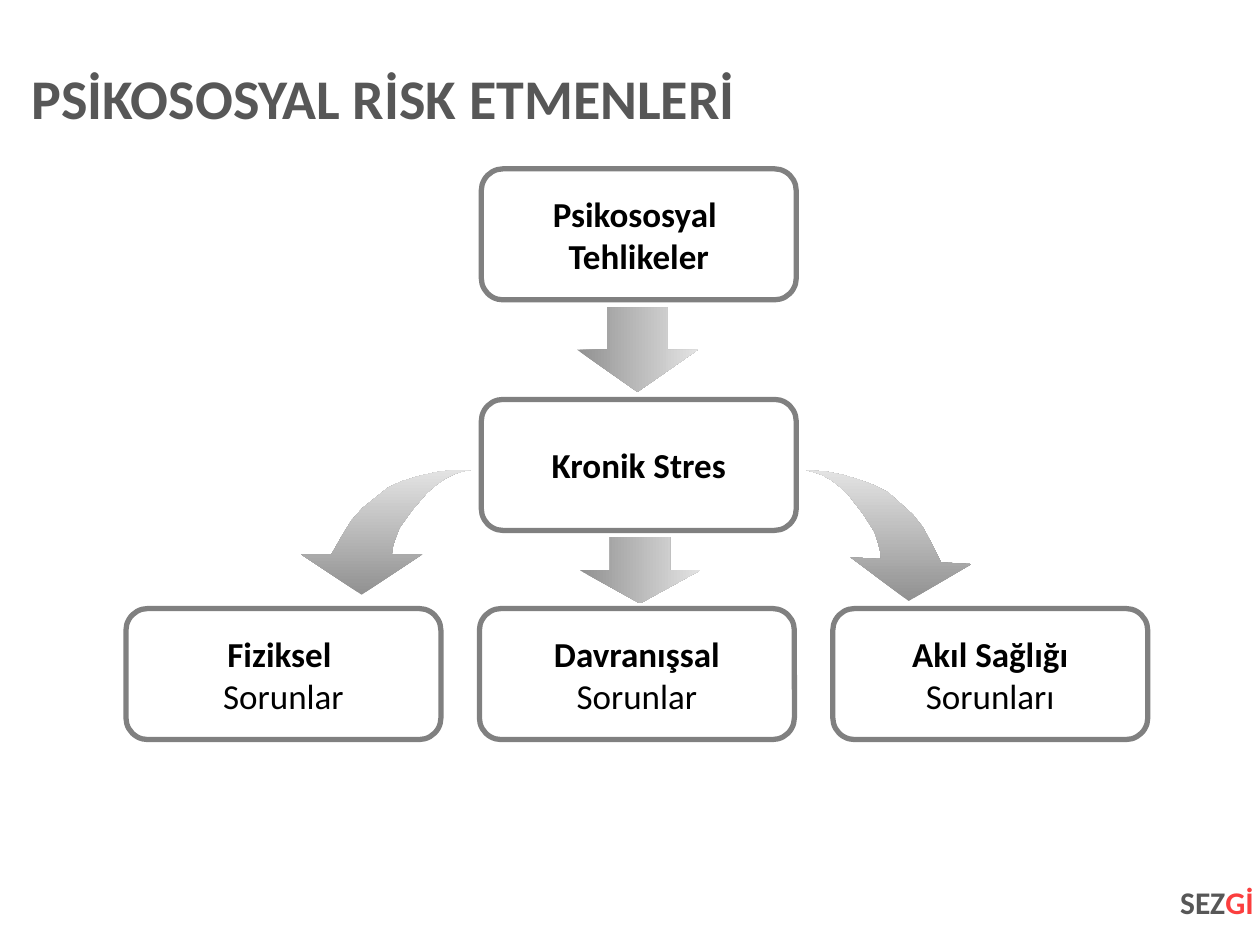
import math

import pptx
import pptx.util
from pptx.dml.color import RGBColor
from pptx.enum.shapes import MSO_SHAPE
from pptx.enum.text import MSO_ANCHOR, PP_ALIGN

BLACK = RGBColor(0x00, 0x00, 0x00)
TITLE_GRAY = RGBColor(0x57, 0x57, 0x57)
BORDER_GRAY = RGBColor(0x80, 0x80, 0x80)
ARROW_DARK = RGBColor(0x91, 0x91, 0x91)
ARROW_LIGHT = RGBColor(0xE3, 0xE3, 0xE3)
RED = RGBColor(0xFB, 0x3E, 0x3E)

# The slide is a grid of 100 columns by 75 rows
COLUMNS, ROWS = 100, 75
BOX_SIZE = (25, 10.4)

# Curved arrow bending down to the left, as (column, row) offsets from its centre
CURVE = [
    (6.75, -4.9), (5.25, -4.9), (3.85, -4.7), (2.55, -4.4), (1.25, -4), (0.15, -3.5),
    (-0.85, -2.7), (-1.85, -1.9), (-2.75, -0.9), (-3.55, 0.4), (-4.35, 1.8),
    (-6.75, 1.8), (-1.95, 5), (2.85, 1.8), (0.45, 1.8), (0.55, 1.1), (0.75, 0.5),
    (1.05, -0.3), (1.55, -1), (2.05, -1.7), (2.65, -2.4), (3.25, -3.1), (3.95, -3.7),
    (4.65, -4.2), (5.45, -4.6), (6.15, -4.8),
]


class SlideBuilder:
    font_name = "Calibri"

    def __init__(self, deck):
        self.slide = deck.slides.add_slide(deck.slide_layouts[6])
        self.column = deck.slide_width / COLUMNS
        self.row = deck.slide_height / ROWS

    def place(self, left, top, width, height):
        return (round(left * self.column), round(top * self.row),
                round(width * self.column), round(height * self.row))

    def style_span(self, span, size, color, bold=True):
        span.font.name = self.font_name
        span.font.size = pptx.util.Pt(size)
        span.font.bold = bold
        span.font.color.rgb = color

    def text(self, area, spans, size, align, anchor, pad=0):
        """Add a one-line text box; spans are (text, color) pairs."""
        frame = self.slide.shapes.add_textbox(*self.place(*area)).text_frame
        frame.word_wrap = True
        frame.vertical_anchor = anchor
        frame.margin_left = frame.margin_right = 0
        frame.margin_top = frame.margin_bottom = pptx.util.Inches(pad)
        para = frame.paragraphs[0]
        para.alignment = align
        for words, color in spans:
            span = para.add_run()
            span.text = words
            self.style_span(span, size, color)
        return para

    def box(self, left, top, lines):
        """Add a rounded box; lines are (text, bold) pairs."""
        box = self.slide.shapes.add_shape(
            MSO_SHAPE.ROUNDED_RECTANGLE, *self.place(left, top, *BOX_SIZE))
        box.shadow.inherit = False
        box.fill.background()
        box.line.color.rgb = BORDER_GRAY
        box.line.width = pptx.util.Pt(3)
        frame = box.text_frame
        frame.word_wrap = False
        frame.vertical_anchor = MSO_ANCHOR.MIDDLE
        frame.text = "\n".join(words for words, bold in lines)
        for para, (words, bold) in zip(frame.paragraphs, lines):
            para.alignment = PP_ALIGN.CENTER
            self.style_span(para.runs[0], 20, BLACK, bold)

    def shade(self, arrow, angle):
        arrow.shadow.inherit = False
        arrow.line.fill.background()
        arrow.fill.gradient()
        arrow.fill.gradient_angle = angle
        for stop, color in zip(arrow.fill.gradient_stops, (ARROW_DARK, ARROW_LIGHT)):
            stop.color.rgb = color

    def down_arrow(self, left, top, height):
        arrow = self.slide.shapes.add_shape(
            MSO_SHAPE.DOWN_ARROW, *self.place(left, top, 9.6, height))
        self.shade(arrow, 0)

    def curved_arrow(self, center_x, center_y, side=1, turn=0):
        """Add a curved arrow; side -1 mirrors it, turn is clockwise degrees."""
        cos, sin = math.cos(math.radians(turn)), math.sin(math.radians(turn))
        points = [((center_x + side * x * cos - y * sin) * self.column,
                   (center_y + side * x * sin + y * cos) * self.row)
                  for x, y in CURVE]
        builder = self.slide.shapes.build_freeform(*points[0])
        builder.add_line_segments(points[1:], close=True)
        self.shade(builder.convert_to_shape(), 90)


def main():
    deck = pptx.Presentation()
    deck.slide_width = pptx.util.Inches(10)
    deck.slide_height = pptx.util.Inches(7.5)
    page = SlideBuilder(deck)

    # Title
    title = page.text((2.5, 4.5, 96.4, 7.1), [("PSİKOSOSYAL RİSK ETMENLERİ", TITLE_GRAY)],
                      32, PP_ALIGN.LEFT, MSO_ANCHOR.MIDDLE, pad=0.05)
    title.line_spacing = 0.9

    # Cause and stress
    page.box(38.2, 13.4, [("Psikososyal ", True), ("Tehlikeler", True)])
    page.box(38.2, 31.7, [("Kronik Stres", True)])

    # Three kinds of problem, evenly spaced
    problems = [("Fiziksel ", "Sorunlar"), ("Davranışsal", "Sorunlar"),
                ("Akıl Sağlığı", "Sorunları")]
    for index, (kind, noun) in enumerate(problems):
        page.box(10 + 28.05 * index, 48.3, [(kind, True), (noun, False)])

    # Arrows
    page.down_arrow(45.8, 24.4, 6.7)
    page.curved_arrow(70.45, 42.6, side=-1, turn=3.2)
    page.curved_arrow(30.65, 42.2)
    page.down_arrow(46, 42.6, 5.3)

    # Footer name
    page.text((92.3, 70.1, 7.2, 4.9), [("SEZ", TITLE_GRAY), ("Gİ", RED)],
              18, PP_ALIGN.RIGHT, MSO_ANCHOR.TOP)

    deck.save("out.pptx")


if __name__ == "__main__":
    main()
